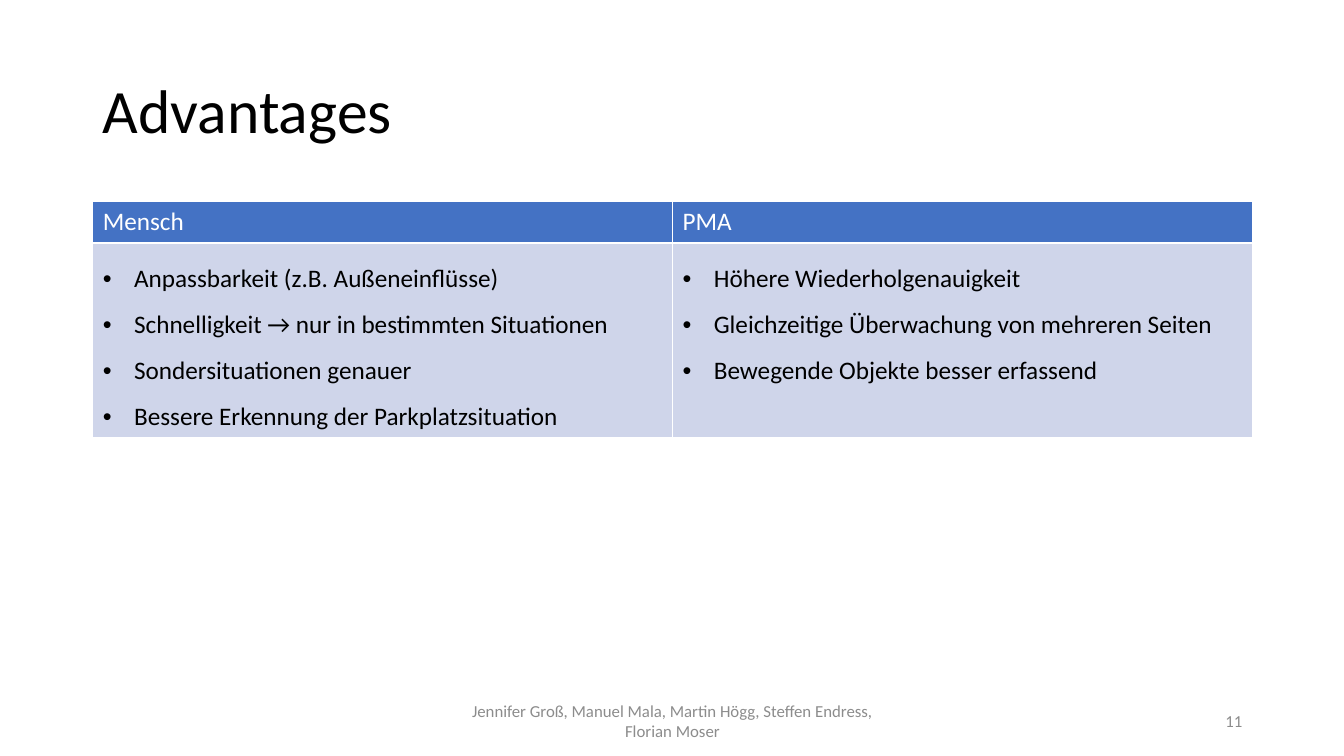
from dataclasses import dataclass

from lxml import etree
from pptx import Presentation
from pptx import util as u
from pptx.dml import color
from pptx.enum import text
from pptx.oxml import ns


@dataclass(frozen=True)
class Theme:
    font: str = "Calibri"
    ink: str = "000000"
    paper: str = "FFFFFF"
    header: str = "4472C4"
    body: str = "CFD5EA"
    muted: str = "8C8C8C"
    title_size: int = 44
    table_size: int = 18
    footer_size: int = 12
    border_width: int = 1


THEME = Theme()
ADVANTAGES = {
    "Mensch": [
        "Anpassbarkeit (z.B. Außeneinflüsse)",
        "Schnelligkeit → nur in bestimmten Situationen",
        "Sondersituationen genauer",
        "Bessere Erkennung der Parkplatzsituation",
    ],
    "PMA": [
        "Höhere Wiederholgenauigkeit",
        "Gleichzeitige Überwachung von mehreren Seiten",
        "Bewegende Objekte besser erfassend",
    ],
}
AUTHORS = "Jennifer Groß, Manuel Mala, Martin Högg, Steffen Endress, Florian Moser"


def set_attributes(target, values):
    for name, value in values.items():
        setattr(target, name, value)


def write(frame, lines, size, ink, **paragraph_format):
    frame.text = "\n".join(lines)
    for paragraph in frame.paragraphs:
        set_attributes(paragraph, paragraph_format)
        for run in paragraph.runs:
            set_attributes(run.font, {"name": THEME.font, "size": u.Pt(size), "bold": False})
            run.font.color.rgb = color.RGBColor.from_string(ink)


def add_bullets(frame):
    for paragraph in frame.paragraphs:
        properties = paragraph._p.get_or_add_pPr()
        properties.set("marL", str(u.Inches(0.31)))
        properties.set("indent", str(u.Inches(-0.31)))
        etree.SubElement(properties, ns.qn("a:buFont")).set("typeface", "Arial")
        etree.SubElement(properties, ns.qn("a:buChar")).set("char", "•")


def add_borders(cell):
    properties = cell._tc.get_or_add_tcPr()
    for position, side in enumerate(("lnL", "lnR", "lnT", "lnB")):
        border = etree.Element(ns.qn(f"a:{side}"), w=str(u.Pt(THEME.border_width)))
        fill = etree.SubElement(border, ns.qn("a:solidFill"))
        etree.SubElement(fill, ns.qn("a:srgbClr")).set("val", THEME.paper)
        properties.insert(position, border)


def fill_cell(cell, lines, fill, ink, **paragraph_format):
    cell.fill.solid()
    cell.fill.fore_color.rgb = color.RGBColor.from_string(fill)
    write(cell.text_frame, lines, THEME.table_size, ink, **paragraph_format)
    add_borders(cell)


def place_title(slide, left, top, width, height):
    title = slide.shapes.title
    set_attributes(title, {
        "left": u.Inches(left), "top": u.Inches(top),
        "width": u.Inches(width), "height": u.Inches(height),
    })
    title.text_frame.vertical_anchor = text.MSO_ANCHOR.MIDDLE
    write(title.text_frame, ["Advantages"], THEME.title_size, THEME.ink,
          alignment=text.PP_ALIGN.LEFT, line_spacing=0.9)


def place_comparison(slide, left, top, width, height):
    header_height = 0.41
    comparison = slide.shapes.add_table(
        2, len(ADVANTAGES), *map(u.Inches, (left, top, width, height))).table
    comparison.rows[0].height = u.Inches(header_height)
    comparison.rows[1].height = u.Inches(height - header_height)
    for column, (side, points) in enumerate(ADVANTAGES.items()):
        fill_cell(comparison.cell(0, column), [side], THEME.header, THEME.paper)
        advantages = comparison.cell(1, column)
        fill_cell(advantages, points, THEME.body, THEME.ink, line_spacing=1.5)
        add_bullets(advantages.text_frame)


def place_footer(slide, left, top, width, height):
    number_width = 3
    authors_width = 4.5
    parts = (
        (AUTHORS, left + (width - authors_width) / 2, authors_width, text.PP_ALIGN.CENTER),
        ("11", left + width - number_width, number_width, text.PP_ALIGN.RIGHT),
    )
    for wording, part_left, part_width, alignment in parts:
        footer = slide.shapes.add_textbox(
            *map(u.Inches, (part_left, top, part_width, height))).text_frame
        set_attributes(footer, {"word_wrap": True, "vertical_anchor": text.MSO_ANCHOR.MIDDLE})
        write(footer, [wording], THEME.footer_size, THEME.muted, alignment=alignment)


def main():
    deck = Presentation()
    set_attributes(deck, {"slide_width": u.Inches(13.33), "slide_height": u.Inches(7.5)})
    slide = deck.slides.add_slide(deck.slide_layouts[5])
    left, width = 0.92, 11.5
    place_title(slide, left, 0.4, width, 1.45)
    place_comparison(slide, left, 2, width, 2.26)
    place_footer(slide, left, 6.95, width, 0.4)
    deck.save("out.pptx")


if __name__ == "__main__":
    main()
